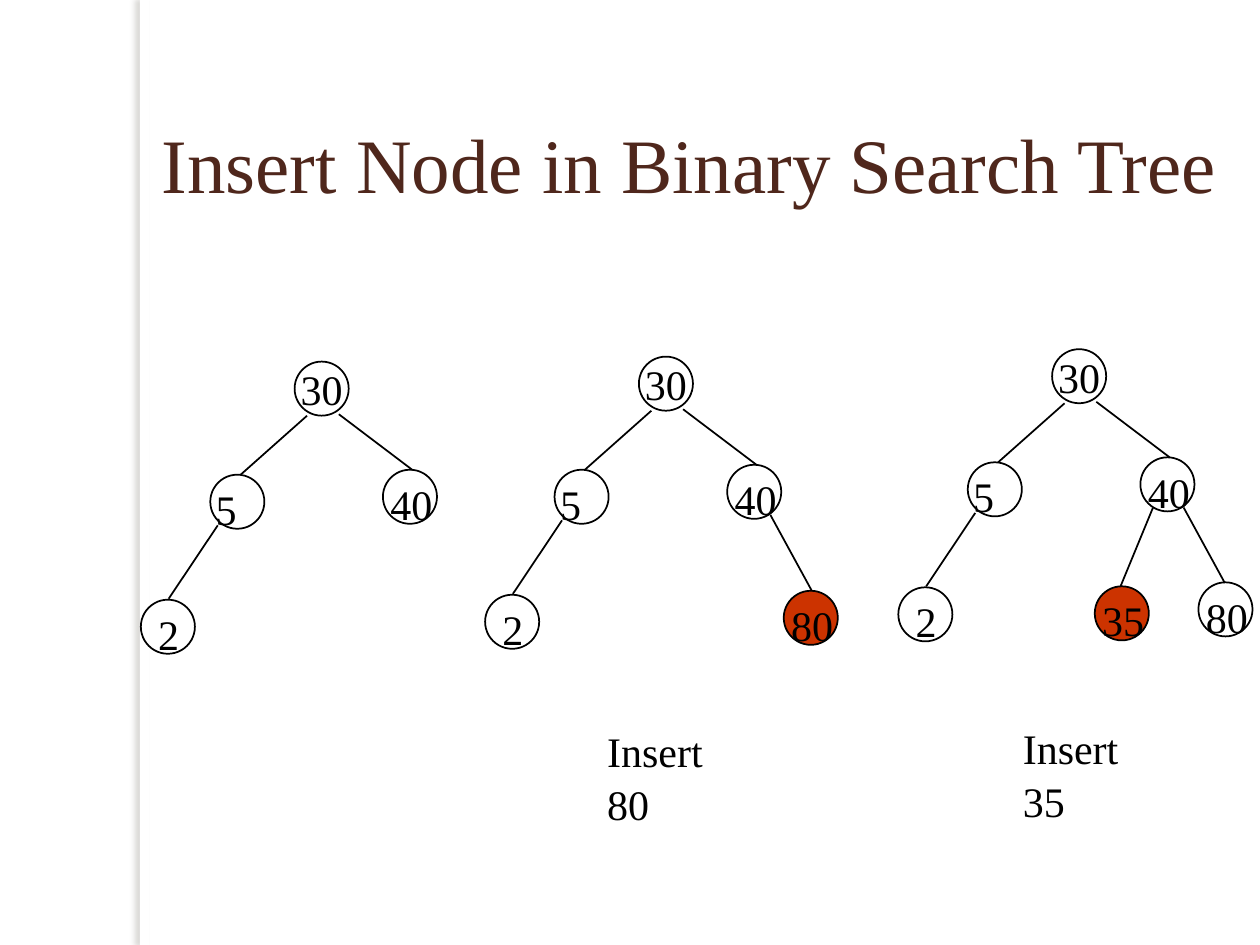
from lxml import etree
from pptx import Presentation
from pptx.dml.color import RGBColor
from pptx.enum import shapes, text
from pptx.oxml.ns import qn
from pptx.util import Cm, Pt

COLORS = {"ink": "000000", "title": "4F271C", "new": "CC3300",
          "bar": "FFFFFF", "shade": "736F63"}
SIZE = 1.09  # node diameter

# Offsets from the root node: label, x, y, label shift, fill
BASE = [("5", -1.7, 2.28, -0.14, None), ("40", 1.78, 2.18, -0.1, None),
        ("2", -3.1, 4.8, 0.1, None)]
# Offsets from the root node: x1, y1, x2, y2
EDGES = [(0.25, 1.09, -1.09, 2.28), (-1.55, 3.3, -2.54, 4.78),
         (0.89, 1.06, 2.37, 2.18)]
RIGHT = (2.65, 3.19, 3.48, 4.71)
LEFT = (2.03, 3.2, 1.37, 4.8)

# Root x, root y, added nodes, added edges
TREES = [
    (5.94, 7.29, [], []),
    (12.88, 7.19, [("80", 2.92, 4.72, -0.1, "new")], [RIGHT]),
    (21.21, 7.04, [("35", 0.86, 4.78, -0.1, "new"),
                   ("80", 2.95, 4.7, -0.1, None)], [LEFT, RIGHT]),
]
NOTES = [("Insert 80", 11.99, 14.45), ("Insert 35", 20.37, 14.4)]

prs = Presentation()
prs.slide_width, prs.slide_height = Cm(25.4), Cm(19.05)
slide = prs.slides.add_slide(prs.slide_layouts[6])


def write(shape, words, size=24, color="ink", center=False, wrap=False):
    frame = shape.text_frame
    frame.word_wrap = wrap
    para = frame.paragraphs[0]
    if center:
        frame.vertical_anchor = text.MSO_ANCHOR.MIDDLE
        para.alignment = text.PP_ALIGN.CENTER
    else:
        para.alignment = text.PP_ALIGN.LEFT
        para.line_spacing = 1.05
    run = para.add_run()
    run.text = words
    run.font.size = Pt(size)
    run.font.name = "Times New Roman"
    run.font.color.rgb = RGBColor.from_string(COLORS[color])


def circle(x, y, fill=None):
    node = slide.shapes.add_shape(shapes.MSO_SHAPE.OVAL,
                                  Cm(x), Cm(y), Cm(SIZE), Cm(SIZE))
    node.shadow.inherit = False
    node.line.color.rgb = RGBColor.from_string(COLORS["ink"])
    node.line.width = Pt(1)
    if fill:
        node.fill.solid()
        node.fill.fore_color.rgb = RGBColor.from_string(COLORS[fill])
    else:
        node.fill.background()
    return node


# Side bar with a soft shadow to its left
bar = slide.shapes.add_shape(shapes.MSO_SHAPE.RECTANGLE,
                             Cm(2.82), 0, Cm(0.2), prs.slide_height)
bar.fill.solid()
bar.fill.fore_color.rgb = RGBColor.from_string(COLORS["bar"])
bar.line.fill.background()
bar.shadow.inherit = False
glow = etree.SubElement(bar.element.spPr.find(qn("a:effectLst")),
                        qn("a:outerShdw"), blurRad=str(Pt(3)),
                        dist=str(Pt(3)), dir="10800000",
                        algn="tl", rotWithShape="0")
tint = etree.SubElement(glow, qn("a:srgbClr"), val=COLORS["shade"])
etree.SubElement(tint, qn("a:alpha"), val="25000")

title = slide.shapes.add_textbox(Cm(1.17), Cm(1.7), Cm(25.45), Cm(3.18))
write(title, "Insert Node in Binary Search Tree", 44, "title", True, True)

for left, top, nodes, edges in TREES:
    write(circle(left, top), "30", center=True)
    for x1, y1, x2, y2 in EDGES + edges:
        edge = slide.shapes.add_connector(
            shapes.MSO_CONNECTOR.STRAIGHT, Cm(left + x1), Cm(top + y1),
            Cm(left + x2), Cm(top + y2))
        edge.line.color.rgb = RGBColor.from_string(COLORS["ink"])
        edge.line.width = Pt(1)
        etree.SubElement(edge.element.spPr, qn("a:effectLst"))
    for name, x, y, shift, fill in BASE + nodes:
        circle(left + x, top + y, fill)
        wide = 0.94 if len(name) == 1 else 1.35
        label = slide.shapes.add_textbox(Cm(left + x + shift), Cm(top + y),
                                         Cm(wide), Cm(1.27))
        write(label, name)

for words, x, y in NOTES:
    note = slide.shapes.add_textbox(Cm(x), Cm(y), Cm(3.4), Cm(1.27))
    write(note, words, wrap=True)

prs.save("out.pptx")
